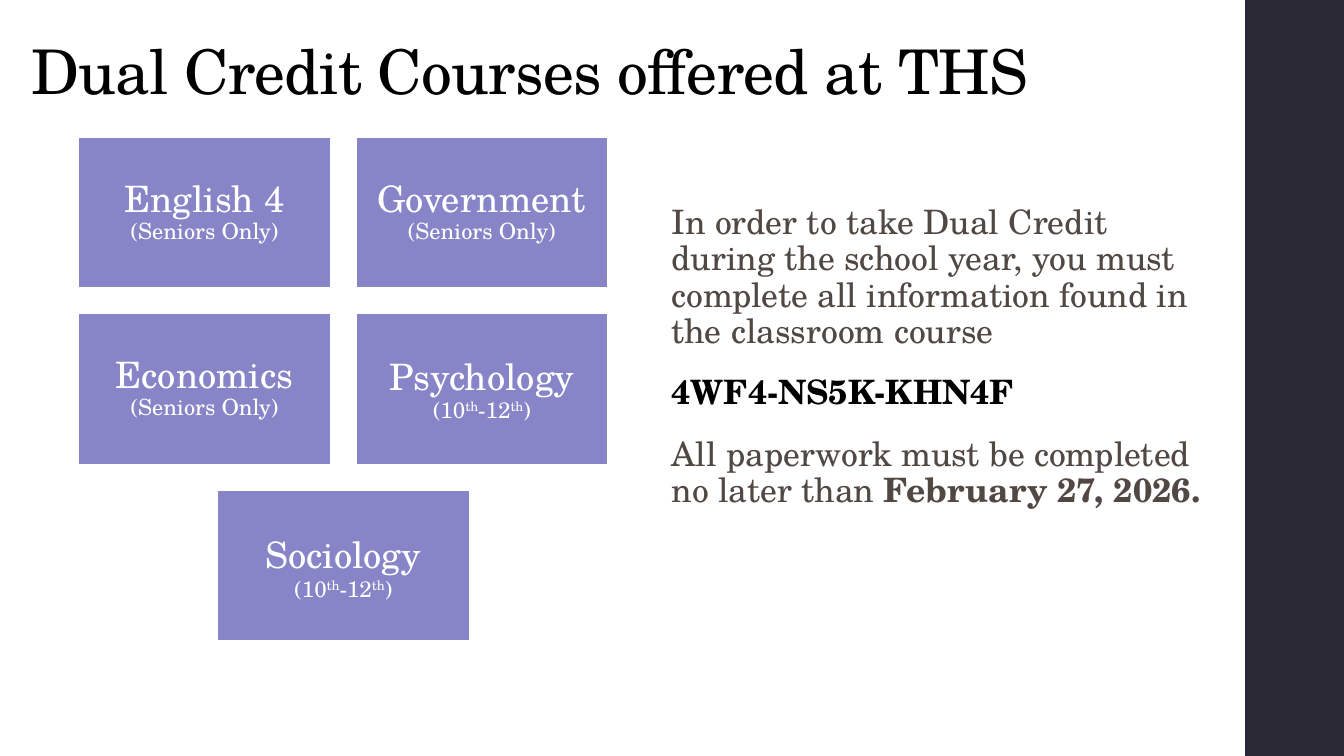
"""Build the slide on dual credit courses offered at THS."""
from pptx import Presentation
from pptx.dml.color import RGBColor
from pptx.enum.shapes import MSO_SHAPE
from pptx.enum.text import MSO_ANCHOR, MSO_AUTO_SIZE, PP_ALIGN
from pptx.oxml.xmlchemy import OxmlElement
from pptx.util import Inches, Pt

FONT = "TeX Gyre Schola"
COLORS = {"black": "000000", "white": "FFFFFF", "tile": "8784C7", "sidebar": "292834", "body": "514843"}
TITLE = "Dual Credit Courses offered at THS"
SENIORS = [("(Seniors Only)", False)]
GRADES = [("(10", False), ("th", True), ("-12", False), ("th", True), (")", False)]
COURSES = [
    ("English 4", 26, SENIORS),
    ("Government", 26, SENIORS),
    ("Economics", 26, SENIORS),
    ("Psychology", 29, GRADES),
    ("Sociology", 33, GRADES),
]
NOTES = [
    [("In order to take Dual Credit during the school year, you must complete "
      "all information found in the classroom course", "body", False)],
    [("4WF4-NS5K-KHN4F", "black", True)],
    [("All paperwork must be completed no later than ", "body", False),
     ("February 27, 2026.", "body", True)],
]
COLS, TILE_W, TILE_H, GAP = 2, 2.5, 1.5, 0.25
GRID_LEFT, GRID_TOP = 0.78, 1.36


def rgb(name):
    return RGBColor.from_string(COLORS[name])


def place(sp, left, top, width, height):
    sp.left, sp.top, sp.width, sp.height = map(Inches, (left, top, width, height))


def add_run(p, text, size, color, bold=False, raised=False):
    r = p.add_run()
    r.text = text
    r.font.name, r.font.size, r.font.bold = FONT, Pt(size), bold
    r.font.color.rgb = rgb(color)
    if raised:
        r._r.get_or_add_rPr().set("baseline", "30000")
    return r


def add_rect(slide, left, top, width, height, color):
    sp = slide.shapes.add_shape(MSO_SHAPE.RECTANGLE, *map(Inches, (left, top, width, height)))
    sp.shadow.inherit = False
    sp.fill.solid()
    sp.fill.fore_color.rgb = rgb(color)
    sp.line.fill.background()
    return sp


def add_title(slide):
    sp = slide.shapes.title
    place(sp, 0.21, -0.33, 10.6, 1.45)
    tf = sp.text_frame
    tf.auto_size, tf.vertical_anchor = MSO_AUTO_SIZE.NONE, MSO_ANCHOR.BOTTOM
    p = tf.paragraphs[0]
    p.alignment, p.line_spacing = PP_ALIGN.LEFT, 0.9
    r = add_run(p, TITLE, 44, "black")
    r._r.get_or_add_rPr().set("spc", "-50")


def add_courses(slide):
    for i, (course, space_size, audience) in enumerate(COURSES):
        row, col = divmod(i, COLS)
        in_row = min(COLS, len(COURSES) - row * COLS)
        left = GRID_LEFT + (col + (COLS - in_row) / 2) * (TILE_W + GAP)
        top = GRID_TOP + row * (TILE_H + GAP)
        sp = add_rect(slide, left, top, TILE_W, TILE_H, "tile")
        sp.line.color.rgb = rgb("white")
        sp.line.width = Pt(1.1)
        tf = sp.text_frame
        tf.word_wrap, tf.vertical_anchor = True, MSO_ANCHOR.MIDDLE
        tf.margin_left = tf.margin_right = tf.margin_top = tf.margin_bottom = Inches(0.11)
        p = tf.paragraphs[0]
        p.alignment, p.line_spacing = PP_ALIGN.CENTER, 0.9
        add_run(p, course, 26, "white")
        add_run(p, " ", space_size, "white")
        for text, raised in audience:
            add_run(p, text, 16, "white", raised=raised)


def add_notes(slide):
    sp = slide.placeholders[1]
    place(sp, 6.66, 1.99, 5.38, 3.52)
    tf = sp.text_frame
    tf.auto_size, tf.vertical_anchor = MSO_AUTO_SIZE.NONE, MSO_ANCHOR.TOP
    tf.margin_left = tf.margin_right = 0
    for i, runs in enumerate(NOTES):
        p = tf.add_paragraph() if i else tf.paragraphs[0]
        pPr = p._p.get_or_add_pPr()
        pPr.set("marL", "0")
        pPr.set("indent", "0")
        pPr.append(OxmlElement("a:buNone"))
        p.line_spacing = 0.9
        p.space_before = Pt(18 if i else 0)
        for text, color, bold in runs:
            add_run(p, text, 24, color, bold)


def main():
    prs = Presentation()
    prs.slide_width, prs.slide_height = Inches(13.33), Inches(7.5)
    slide = prs.slides.add_slide(prs.slide_layouts[1])
    add_rect(slide, 12.35, 0, 0.98, 7.5, "sidebar")
    add_title(slide)
    add_courses(slide)
    add_notes(slide)
    prs.save("out.pptx")


if __name__ == "__main__":
    main()
